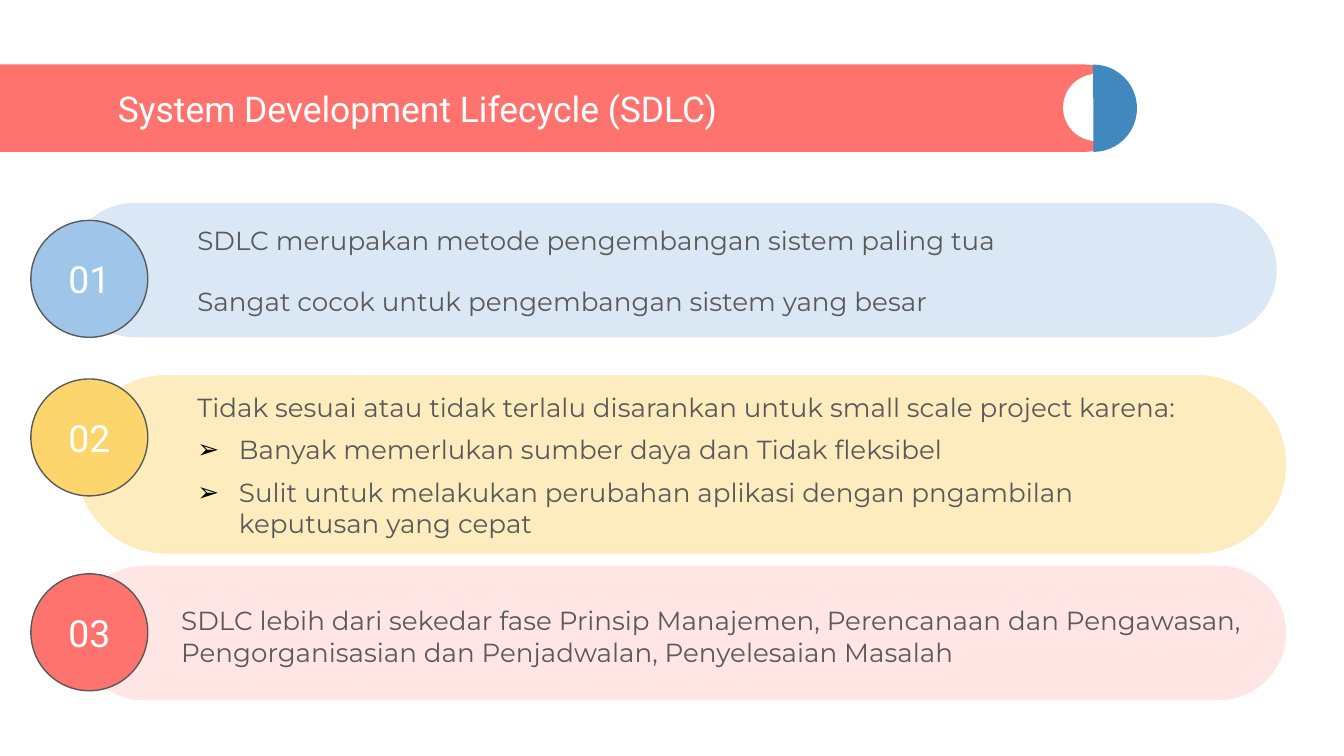
from lxml import etree
from pptx import Presentation
from pptx.dml.color import RGBColor
from pptx.enum.shapes import MSO_SHAPE
from pptx.enum.text import MSO_ANCHOR, PP_ALIGN
from pptx.oxml.ns import qn
from pptx.util import Inches, Pt

WHITE = RGBColor(0xFF, 0xFF, 0xFF)
BLACK = RGBColor(0x00, 0x00, 0x00)
GRAY = RGBColor(0x59, 0x59, 0x59)
CORAL = RGBColor(0xFF, 0x73, 0x6E)
BLUE = RGBColor(0x40, 0x88, 0xBE)
SKY = RGBColor(0x9F, 0xC5, 0xE8)
AMBER = RGBColor(0xFB, 0xBE, 0x18)
YELLOW = RGBColor(0xFC, 0xD6, 0x6C)

BULLET = "➢"
BULLET_INDENT = Inches(0.31)
DISC_SIZE = 0.87

SECTIONS = [
    {
        "number": "01", "disc_top": 1.64, "disc_color": SKY,
        "bar": (0.5, 1.51, 9, 1), "bar_color": SKY, "opacity": 38,
        "text_box": (1.37, 1.57, 7.62, 0.89), "space_after": 16,
        "lines": ["SDLC merupakan metode pengembangan sistem paling tua",
                  "Sangat cocok untuk pengembangan sistem yang besar"],
        "bullets": [],
    },
    {
        "number": "02", "disc_top": 2.82, "disc_color": YELLOW,
        "bar": (0.57, 2.79, 9, 1.33), "bar_color": AMBER, "opacity": 28,
        "text_box": (1.37, 2.81, 7.73, 0.95), "space_after": 6,
        "lines": ["Tidak sesuai atau tidak terlalu disarankan untuk small scale project karena:"],
        "bullets": ["Banyak memerlukan sumber daya dan Tidak fleksibel",
                    "Sulit untuk melakukan perubahan aplikasi dengan pngambilan keputusan yang cepat"],
    },
    {
        "number": "03", "disc_top": 4.27, "disc_color": CORAL,
        "bar": (0.57, 4.21, 9, 1), "bar_color": CORAL, "opacity": 18,
        "text_box": (1.25, 4.4, 8.32, 0.73), "space_after": 16,
        "lines": ["SDLC lebih dari sekedar fase Prinsip Manajemen, Perencanaan dan Pengawasan, "
                  "Pengorganisasian dan Penjadwalan, Penyelesaian Masalah"],
        "bullets": [],
    },
]


def add_filled_shape(slide, kind, box, color, opacity=100, outline=None, adjustments=(), rotation=0):
    shape = slide.shapes.add_shape(kind, *map(Inches, box))
    shape.shadow.inherit = False
    shape.rotation = rotation
    for index, value in enumerate(adjustments):
        shape.adjustments[index] = value
    shape.fill.solid()
    shape.fill.fore_color.rgb = color
    if opacity < 100:
        color_element = shape._element.spPr.find(qn("a:solidFill"))[0]
        etree.SubElement(color_element, qn("a:alpha"), val=str(opacity * 1000))
    if outline is None:
        shape.line.fill.background()
    else:
        shape.line.color.rgb = outline
        shape.line.width = Pt(0.75)
    return shape


def add_bullet(paragraph, font):
    properties = paragraph._p.get_or_add_pPr()
    properties.set("marL", str(BULLET_INDENT))
    properties.set("indent", str(-BULLET_INDENT))
    bullet_color = etree.SubElement(properties, qn("a:buClr"))
    etree.SubElement(bullet_color, qn("a:srgbClr"), val=str(BLACK))
    etree.SubElement(properties, qn("a:buFont"), typeface=font)
    etree.SubElement(properties, qn("a:buChar"), char=BULLET)


def write_text(shape, lines, bullets=(), font="Montserrat", size=14, color=GRAY,
               align=PP_ALIGN.LEFT, anchor=MSO_ANCHOR.TOP, space_after=0):
    frame = shape.text_frame
    frame.word_wrap = True
    frame.vertical_anchor = anchor
    frame.margin_left = frame.margin_right = Inches(0.1)
    frame.margin_top = frame.margin_bottom = Inches(0.1)
    for index, line in enumerate([*lines, *bullets]):
        paragraph = frame.add_paragraph() if index else frame.paragraphs[0]
        paragraph.alignment = align
        paragraph.space_after = Pt(space_after)
        if index >= len(lines):
            add_bullet(paragraph, font)
        run = paragraph.add_run()
        run.text = line
        run.font.name = font
        run.font.size = Pt(size)
        run.font.color.rgb = color


def add_text(slide, box, lines, **text_format):
    write_text(slide.shapes.add_textbox(*map(Inches, box)), lines, **text_format)


def add_header(slide, title):
    add_filled_shape(slide, MSO_SHAPE.ROUNDED_RECTANGLE, (-0.32, 0.48, 8.72, 0.65), CORAL,
                     adjustments=[0.5])
    add_filled_shape(slide, MSO_SHAPE.OVAL, (7.91, 0.55, 0.5, 0.5), WHITE, rotation=180)
    add_filled_shape(slide, MSO_SHAPE.PIE, (7.81, 0.48, 0.65, 0.65), BLUE,
                     adjustments=[53.67, 162], rotation=180)
    add_text(slide, (0.78, 0.6, 6.97, 0.41), [title], font="Roboto", size=19, color=WHITE,
             anchor=MSO_ANCHOR.MIDDLE)


def add_section(slide, section):
    add_filled_shape(slide, MSO_SHAPE.ROUNDED_RECTANGLE, section["bar"], section["bar_color"],
                     opacity=section["opacity"], adjustments=[0.5])
    add_text(slide, section["text_box"], section["lines"], bullets=section["bullets"],
             space_after=section["space_after"])
    disc = add_filled_shape(slide, MSO_SHAPE.OVAL,
                            (0.23, section["disc_top"], DISC_SIZE, DISC_SIZE),
                            section["disc_color"], outline=GRAY)
    write_text(disc, [section["number"]], font="Roboto", size=20, color=WHITE,
               align=PP_ALIGN.CENTER, anchor=MSO_ANCHOR.MIDDLE)


def main():
    presentation = Presentation()
    presentation.slide_width = Inches(10)
    presentation.slide_height = Inches(10) * 9 // 16
    slide = presentation.slides.add_slide(presentation.slide_layouts[6])
    add_header(slide, "System Development Lifecycle (SDLC)")
    for section in SECTIONS:
        add_section(slide, section)
    presentation.save("out.pptx")


if __name__ == "__main__":
    main()
